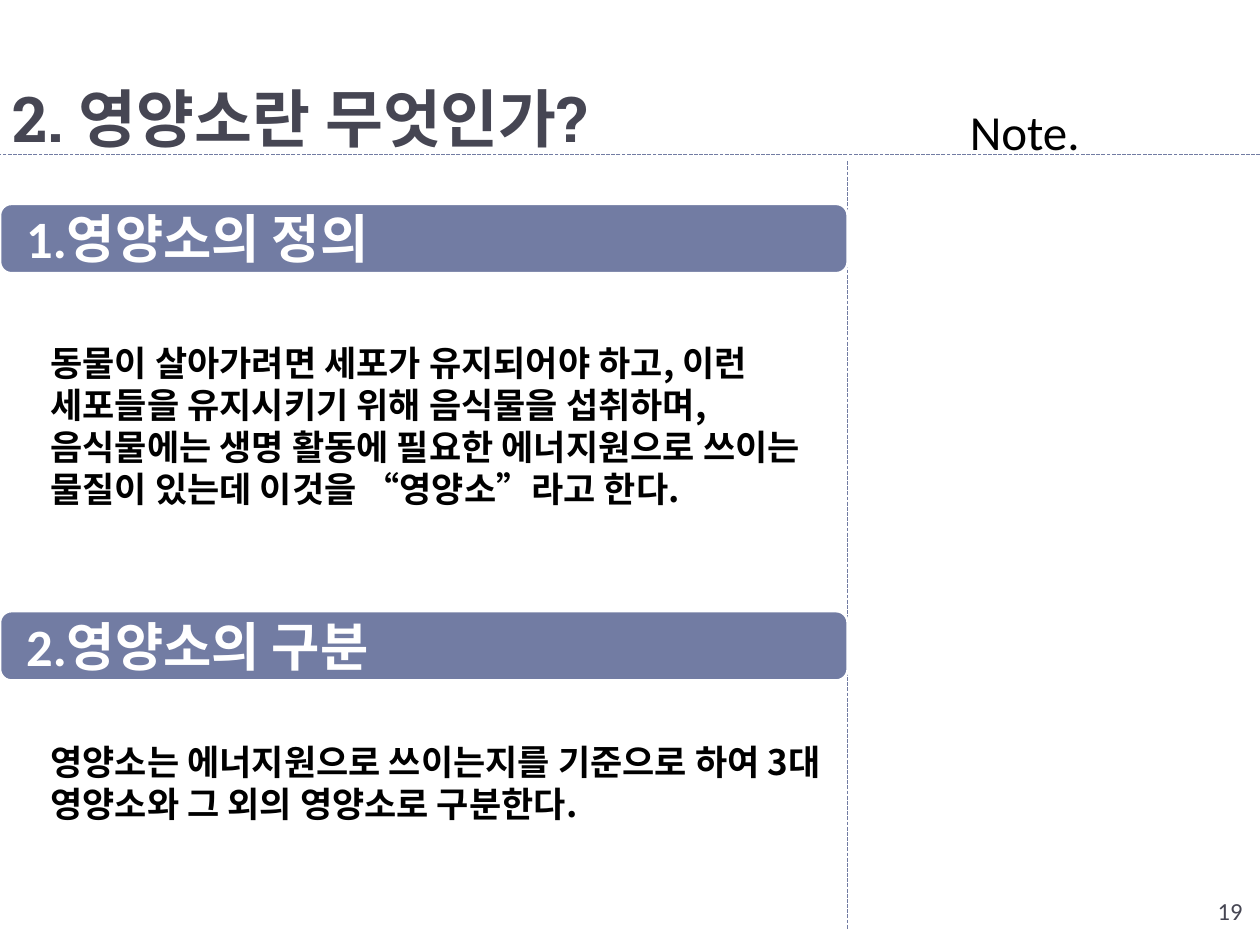
from dataclasses import dataclass

import pptx
import pptx.dml.color
import pptx.enum.dml
import pptx.enum.shapes
import pptx.enum.text
import pptx.oxml.ns
import pptx.util
from lxml import etree

Cm = pptx.util.Cm
Pt = pptx.util.Pt
Anchor = pptx.enum.text.MSO_ANCHOR
Align = pptx.enum.text.PP_ALIGN

ACCENT, DARK, BLACK, WHITE = "727CA3", "464653", "000000", "FFFFFF"
KOREAN_FONT = "Noto Sans CJK KR"
SLIDE_WIDTH, SLIDE_HEIGHT = 25.4, 19.05
COLUMN_WIDTH = 17.09  # main column, left of the notes area
RULE_TOP = 3.12


@dataclass
class TextStyle:
    size: float
    color: str
    font: str = "Calibri"
    bold: bool = False


@dataclass
class Box:
    left: float
    top: float
    width: float
    height: float

    def lengths(self) -> tuple:
        return Cm(self.left), Cm(self.top), Cm(self.width), Cm(self.height)


@dataclass
class Heading:
    text: str
    top: float


HEADINGS = [Heading("1.영양소의 정의", 4.11), Heading("2.영양소의 구분", 12.32)]
BODY_TEXTS = [
    "동물이 살아가려면 세포가 유지되어야 하고, 이런 세포들을 유지시키기 위해 "
    "음식물을 섭취하며, 음식물에는 생명 활동에 필요한 에너지원으로 쓰이는 "
    "물질이 있는데 이것을 “영양소”라고 한다.",
    "영양소는 에너지원으로 쓰이는지를 기준으로 하여 3대 영양소와 그 외의 "
    "영양소로 구분한다.",
]


def rgb(color: str):
    return pptx.dml.color.RGBColor.from_string(color)


def add_run(paragraph, text: str, style: TextStyle) -> None:
    run = paragraph.add_run()
    run.text = text
    run.font.size = Pt(style.size)
    run.font.bold = style.bold
    run.font.name = style.font
    run.font.color.rgb = rgb(style.color)
    # East Asian typeface for the Korean letters
    east_asian = etree.SubElement(run.font._element, pptx.oxml.ns.qn("a:ea"))
    east_asian.set("typeface", KOREAN_FONT)


def add_text(slide, box: Box, text: str, style: TextStyle, align=Align.LEFT):
    shape = slide.shapes.add_textbox(*box.lengths())
    shape.text_frame.word_wrap = True
    paragraph = shape.text_frame.paragraphs[0]
    paragraph.alignment = align
    add_run(paragraph, text, style)
    return shape


def add_dashed_line(slide, start: tuple, end: tuple) -> None:
    line = slide.shapes.add_connector(
        pptx.enum.shapes.MSO_CONNECTOR.STRAIGHT,
        Cm(start[0]), Cm(start[1]), Cm(end[0]), Cm(end[1]))
    line.line.color.rgb = rgb(ACCENT)
    line.line.width = Pt(0.75)
    line.line.dash_style = pptx.enum.dml.MSO_LINE.SQUARE_DOT
    etree.SubElement(line._element.spPr, pptx.oxml.ns.qn("a:effectLst"))


def add_heading(slide, heading: Heading) -> None:
    bar = slide.shapes.add_shape(
        pptx.enum.shapes.MSO_SHAPE.ROUNDED_RECTANGLE,
        *Box(0, heading.top, COLUMN_WIDTH, 1.4).lengths())
    bar.shadow.inherit = False
    bar.fill.solid()
    bar.fill.fore_color.rgb = rgb(ACCENT)
    bar.line.color.rgb = rgb(WHITE)
    bar.line.width = Pt(1.5)

    label = add_text(slide, Box(0.15, heading.top + 0.13, 16.79, 1.27),
                     heading.text, TextStyle(30, WHITE, bold=True))
    frame = label.text_frame
    frame.vertical_anchor = Anchor.MIDDLE
    frame.margin_left = frame.margin_right = Cm(0.38)
    frame.margin_top = frame.margin_bottom = 0
    frame.paragraphs[0].line_spacing = 0.9


def add_title(slide, text: str) -> None:
    title = slide.shapes.title
    title.left, title.top, title.width, title.height = Box(
        0, 1.19, SLIDE_WIDTH, 1.93).lengths()
    frame = title.text_frame
    frame.vertical_anchor = Anchor.BOTTOM
    frame.margin_bottom = 0
    paragraph = frame.paragraphs[0]
    paragraph.alignment = Align.LEFT
    add_run(paragraph, text, TextStyle(36, DARK, "Roboto Slab", True))


def add_body(slide, texts: list[str]) -> None:
    body = slide.shapes.add_textbox(*Box(0, 3.33, COLUMN_WIDTH, 15.72).lengths())
    frame = body.text_frame
    frame.word_wrap = True
    frame.margin_left = Cm(1.02)
    frame.margin_top = Cm(3.56)
    style = TextStyle(20, BLACK, KOREAN_FONT, True)
    for index, text in enumerate(texts):
        paragraph = frame.add_paragraph() if index else frame.paragraphs[0]
        paragraph.line_spacing = Pt(24)
        paragraph.space_before = Pt(132 if index else 0)
        add_run(paragraph, text, style)


def main() -> None:
    presentation = pptx.Presentation()
    presentation.slide_width = Cm(SLIDE_WIDTH)
    presentation.slide_height = Cm(SLIDE_HEIGHT)
    slide = presentation.slides.add_slide(presentation.slide_layouts[5])

    # Title, body and notes label
    add_title(slide, "2. 영양소란 무엇인가?")
    add_body(slide, BODY_TEXTS)
    add_text(slide, Box(19.3, 1.93, 3, 2.62), "Note.", TextStyle(28, BLACK))

    # Dividing lines
    add_dashed_line(slide, (COLUMN_WIDTH, 3.25), (COLUMN_WIDTH, 18.72))
    add_dashed_line(slide, (SLIDE_WIDTH, RULE_TOP), (0, RULE_TOP))

    # Page number
    add_text(slide, Box(19.79, 17.93, 5.51, 1.02), "19",
             TextStyle(14, DARK), Align.RIGHT)

    # Section headings
    for heading in HEADINGS:
        add_heading(slide, heading)

    presentation.save("out.pptx")


if __name__ == "__main__":
    main()
